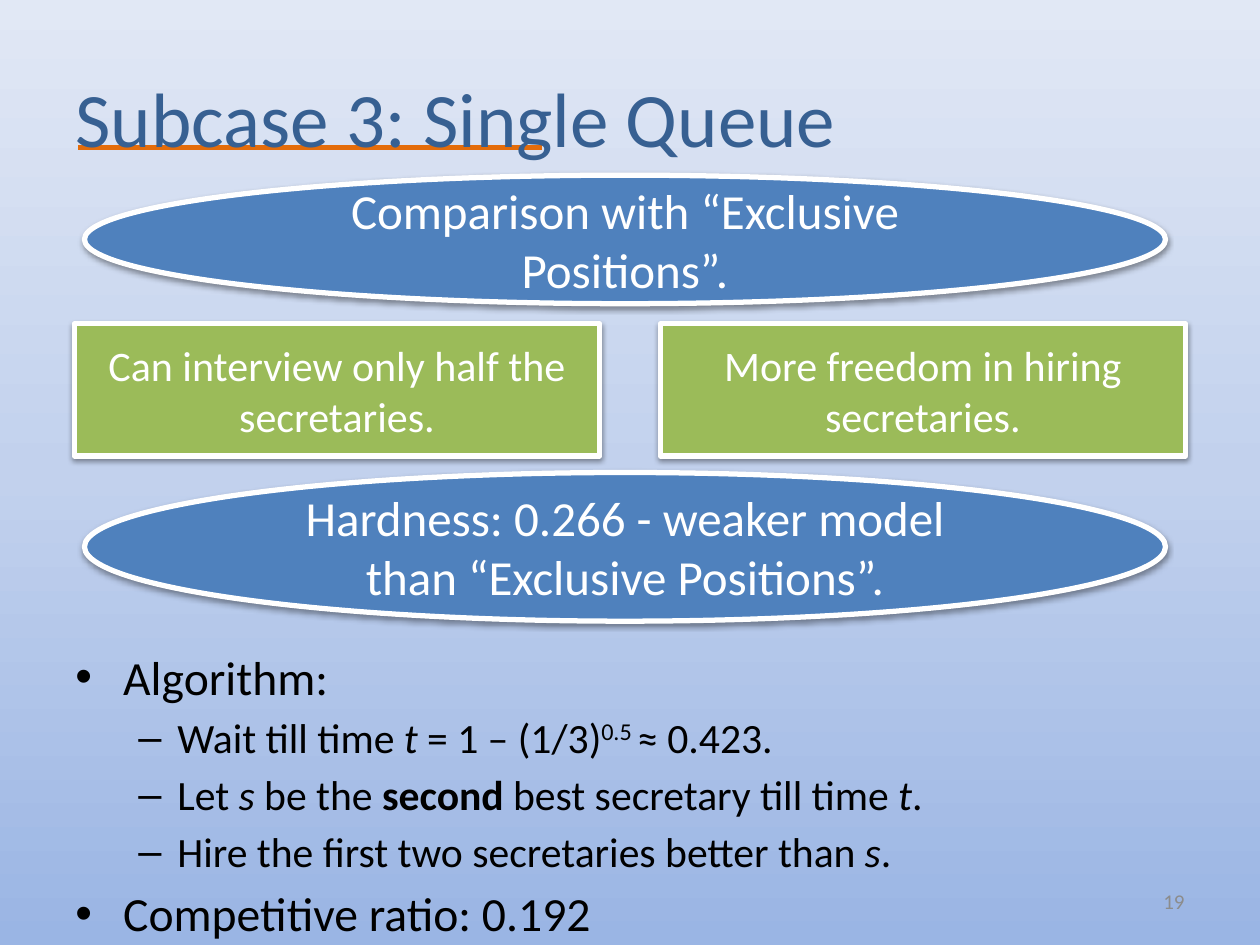
from copy import deepcopy
from dataclasses import dataclass
from typing import NamedTuple

from lxml.etree import SubElement
from pptx import Presentation
from pptx.dml.color import RGBColor
from pptx.enum.shapes import MSO_CONNECTOR, MSO_SHAPE
from pptx.enum.text import MSO_ANCHOR, PP_ALIGN
from pptx.oxml.ns import qn
from pptx.util import Inches, Pt


@dataclass(frozen=True)
class Theme:
    font: str = "Calibri"
    title: str = "376092"
    rule: str = "E46C0A"
    oval: str = "4F81BD"
    card: str = "9BBB59"
    white: str = "FFFFFF"
    text: str = "000000"
    number: str = "8C8C8C"
    background: tuple = ((0, "9AB5E4"), (0.5, "C2D1ED"), (1, "E1E8F5"))
    title_size: float = 44
    oval_size: float = 28
    card_size: float = 24
    number_size: float = 12
    bullet_sizes: tuple = (27.2, 23.8)
    outline: float = 3


class Box(NamedTuple):
    """Place on a grid of 100 columns by 75 rows."""
    col: float
    row: float
    cols: float
    rows: float


class Callout(NamedTuple):
    preset: MSO_SHAPE
    box: Box
    fill: str
    size: float
    text: str


class Span(NamedTuple):
    text: str
    style: str = ""


class Bullet(NamedTuple):
    level: int
    spans: tuple


THEME = Theme()
CELL = Inches(0.1)
INDENTS = ((0.38, 0.38), (0.81, 0.31))
MARKS = "•–"
SPACE_BEFORE = 0.17

OVAL_COL, OVAL_COLS = 6.7, 85.8
CARD_COL, CARD_STEP = 5.9, 46.5
CARD_TEXTS = ("Can interview only half the secretaries.",
              "More freedom in hiring secretaries.")

CALLOUTS = [
    Callout(MSO_SHAPE.OVAL, Box(OVAL_COL, 13.9, OVAL_COLS, 10.2), THEME.oval,
            THEME.oval_size, "Comparison with “Exclusive Positions”."),
    *(Callout(MSO_SHAPE.RECTANGLE, Box(CARD_COL + i * CARD_STEP, 25.7, 41.7, 10.5),
              THEME.card, THEME.card_size, text)
      for i, text in enumerate(CARD_TEXTS)),
    Callout(MSO_SHAPE.OVAL, Box(OVAL_COL, 37.5, OVAL_COLS, 11.8), THEME.oval,
            THEME.oval_size,
            "Hardness: 0.266 - weaker model than “Exclusive Positions”."),
]

BULLETS = [
    Bullet(0, (Span("Algorithm:"),)),
    Bullet(1, (Span("Wait till time "), Span("t", "italic"), Span(" = 1 – (1/3)"),
               Span("0.5 ", "super"), Span("≈ 0.423."))),
    Bullet(1, (Span("Let "), Span("s", "italic"), Span(" be the "),
               Span("second", "bold"), Span(" best secretary till time "),
               Span("t", "italic"), Span("."))),
    Bullet(1, (Span("Hire the first two secretaries better than "),
               Span("s", "italic"), Span("."))),
    Bullet(0, (Span("Competitive ratio: 0.192"),)),
]


def place(box: Box) -> list[int]:
    return [round(n * CELL) for n in box]


def style_font(font, size: float, color: str) -> None:
    font.name = THEME.font
    font.size = Pt(size)
    font.color.rgb = RGBColor.from_string(color)


def paint_background(slide) -> None:
    fill = slide.background.fill
    fill.gradient()
    fill.gradient_angle = 90
    stops = slide.element.find(".//" + qn("a:gsLst"))
    stops.append(deepcopy(stops[-1]))
    for stop, (position, color) in zip(fill.gradient_stops, THEME.background):
        stop.position = position
        stop.color.rgb = RGBColor.from_string(color)


def add_rule(slide, col: float, row: float, cols: float) -> None:
    left, top, width, _ = place(Box(col, row, cols, 0))
    line = slide.shapes.add_connector(MSO_CONNECTOR.STRAIGHT, left, top, left + width, top)
    line.line.color.rgb = RGBColor.from_string(THEME.rule)
    line.line.width = Pt(THEME.outline)
    SubElement(line.element.spPr, qn("a:effectLst"))


def add_label(slide, box: Box, text: str, size: float, color: str,
              align: PP_ALIGN = PP_ALIGN.LEFT) -> None:
    tf = slide.shapes.add_textbox(*place(box)).text_frame
    tf.word_wrap = True
    tf.vertical_anchor = MSO_ANCHOR.MIDDLE
    tf.text = text
    p = tf.paragraphs[0]
    p.alignment = align
    style_font(p.runs[0].font, size, color)


def add_shadow(sp) -> None:
    """Give the shape a soft shadow falling straight down."""
    sp.shadow.inherit = False
    effects = sp.element.spPr.find(qn("a:effectLst"))
    outer = SubElement(effects, qn("a:outerShdw"), blurRad=str(Pt(3.1)),
                       dist=str(Pt(1.6)), dir="5400000", rotWithShape="0")
    color = SubElement(outer, qn("a:srgbClr"), val=THEME.text)
    SubElement(color, qn("a:alpha"), val="38000")


def add_callout(slide, callout: Callout) -> None:
    sp = slide.shapes.add_shape(callout.preset, *place(callout.box))
    sp.fill.solid()
    sp.fill.fore_color.rgb = RGBColor.from_string(callout.fill)
    sp.line.color.rgb = RGBColor.from_string(THEME.white)
    sp.line.width = Pt(THEME.outline)
    add_shadow(sp)
    tf = sp.text_frame
    tf.word_wrap = True
    tf.vertical_anchor = MSO_ANCHOR.MIDDLE
    tf.text = callout.text
    p = tf.paragraphs[0]
    p.alignment = PP_ALIGN.CENTER
    style_font(p.runs[0].font, callout.size, THEME.white)


def add_bullets(slide, box: Box, bullets: list[Bullet]) -> None:
    tf = slide.shapes.add_textbox(*place(box)).text_frame
    tf.word_wrap = True
    for i, (level, spans) in enumerate(bullets):
        p = tf.add_paragraph() if i else tf.paragraphs[0]
        size = THEME.bullet_sizes[level]
        p.level = level
        p.space_before = Pt(size * SPACE_BEFORE)
        margin, hanging = INDENTS[level]
        pPr = p._p.get_or_add_pPr()
        pPr.set("marL", str(Inches(margin)))
        pPr.set("indent", str(-Inches(hanging)))
        SubElement(pPr, qn("a:buFont"), typeface="Arial")
        SubElement(pPr, qn("a:buChar"), char=MARKS[level])
        for text, style in spans:
            r = p.add_run()
            r.text = text
            style_font(r.font, size, THEME.text)
            if style == "super":
                r.font._element.set("baseline", "30000")
            elif style:
                setattr(r.font, style, True)


def main() -> None:
    prs = Presentation()
    prs.slide_width, prs.slide_height = 100 * CELL, 75 * CELL
    slide = prs.slides.add_slide(prs.slide_layouts[6])
    paint_background(slide)
    add_rule(slide, 6.2, 11.7, 36.8)
    add_label(slide, Box(5, 3, 90, 12.5), "Subcase 3: Single Queue",
              THEME.title_size, THEME.title)
    add_bullets(slide, Box(5, 50.9, 90, 21.3), BULLETS)
    add_label(slide, Box(71.7, 69.5, 23.3, 4), "19",
              THEME.number_size, THEME.number, PP_ALIGN.RIGHT)
    for callout in CALLOUTS:
        add_callout(slide, callout)
    prs.save("out.pptx")


if __name__ == "__main__":
    main()
